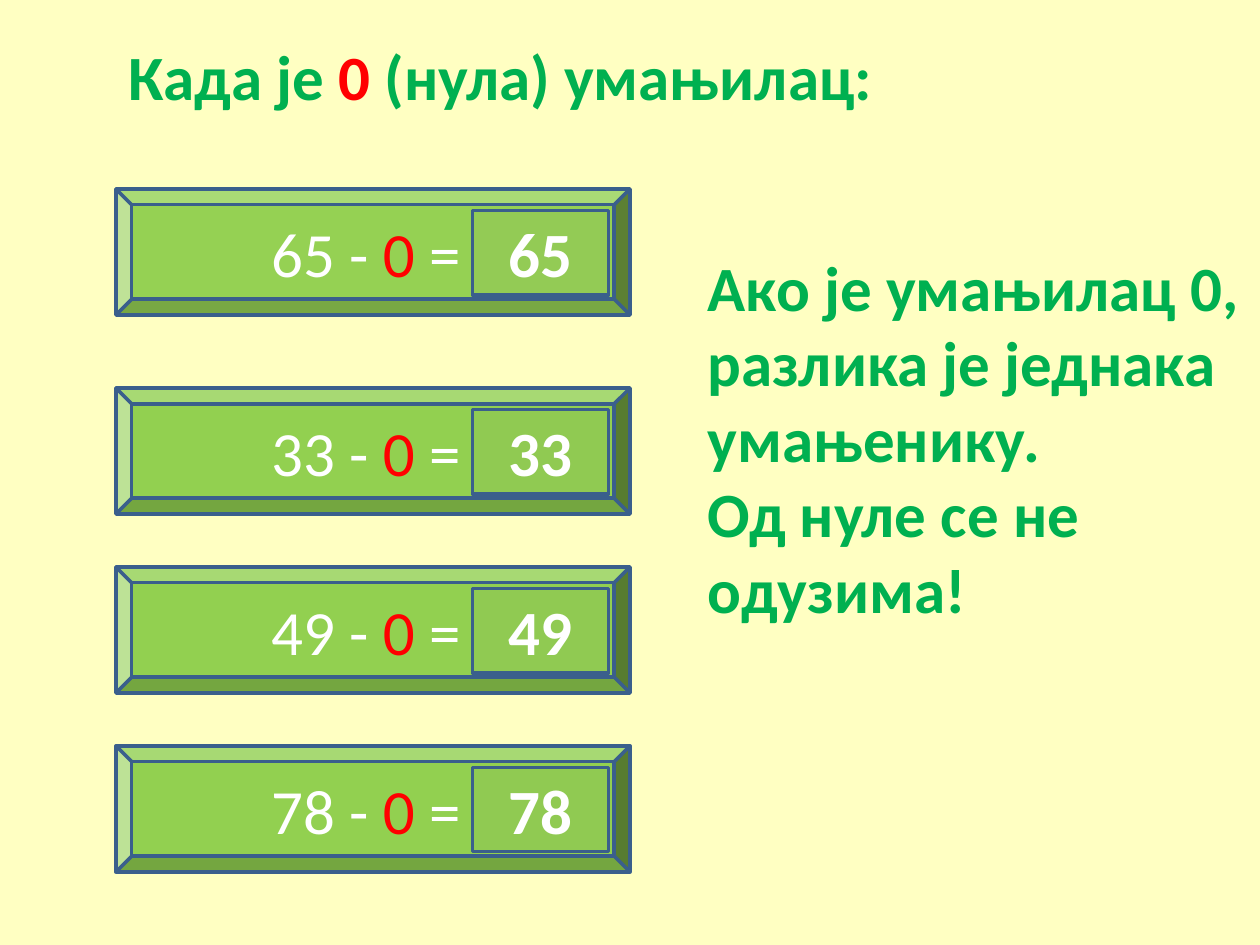
from dataclasses import dataclass

from lxml.etree import SubElement
from pptx import Presentation
from pptx.dml.color import RGBColor
from pptx.enum.shapes import MSO_SHAPE as Shape
from pptx.enum.text import MSO_ANCHOR as Anchor, MSO_AUTO_SIZE as AutoSize, PP_ALIGN as Align
from pptx.oxml.ns import qn
from pptx.util import Inches, Pt


@dataclass(frozen=True)
class Theme:
    page: str = "FFFFC2"
    panel: str = "92D050"
    answer: str = "7030A0"
    outline: str = "3A5F8C"
    green: str = "00B050"
    red: str = "FF0000"
    white: str = "FFFFFF"
    font: str = "Calibri"
    size: int = 36
    line: int = 2


class SlideBuilder:
    def __init__(self, deck, theme):
        self.theme = theme
        self.page = deck.slides.add_slide(deck.slide_layouts[6])
        fill = self.page.background.fill
        fill.solid()
        fill.fore_color.rgb = RGBColor.from_string(theme.page)

    def add_spans(self, para, spans, bold, align):
        para.alignment = align
        for text, color in spans:
            span = para.add_run()
            span.text = text
            span.font.name = self.theme.font
            span.font.size = Pt(self.theme.size)
            span.font.bold = bold
            span.font.color.rgb = RGBColor.from_string(color)

    def panel(self, kind, left, top, width, height, fill, spans, bold=False, opacity=100):
        box = self.page.shapes.add_shape(
            kind, Inches(left), Inches(top), Inches(width), Inches(height))
        box.shadow.inherit = False
        box.fill.solid()
        box.fill.fore_color.rgb = RGBColor.from_string(fill)
        if opacity < 100:
            color = box.element.spPr.find(qn("a:solidFill"))[0]
            SubElement(color, qn("a:alpha")).set("val", str(opacity * 1000))
        box.line.color.rgb = RGBColor.from_string(self.theme.outline)
        box.line.width = Pt(self.theme.line)
        box.text_frame.vertical_anchor = Anchor.MIDDLE
        self.add_spans(box.text_frame.paragraphs[0], spans, bold, Align.CENTER)

    def text(self, left, top, width, height, paragraphs):
        box = self.page.shapes.add_textbox(
            Inches(left), Inches(top), Inches(width), Inches(height))
        frame = box.text_frame
        frame.word_wrap = True
        frame.auto_size = AutoSize.SHAPE_TO_FIT_TEXT
        for index, spans in enumerate(paragraphs):
            para = frame.add_paragraph() if index else frame.paragraphs[0]
            self.add_spans(para, spans, True, Align.LEFT)

    def equation(self, top, number, opacity):
        theme = self.theme
        self.panel(Shape.BEVEL, 0.92, top, 4.08, 1, theme.panel,
                   [(f"{number} - ", theme.white), ("0", theme.red), (" = ", theme.white)],
                   opacity=opacity)
        self.panel(Shape.RECTANGLE, 3.75, top + 0.17, 1.08, 0.67, theme.answer,
                   [(str(number), theme.white)], bold=True, opacity=3)


def main():
    deck = Presentation()
    deck.slide_width, deck.slide_height = Inches(10), Inches(7.5)
    theme = Theme()
    builder = SlideBuilder(deck, theme)

    equations = [(1.5, 65, 97), (3.08, 33, 100), (4.5, 49, 100), (5.92, 78, 100)]
    for top, number, opacity in equations:
        builder.equation(top, number, opacity)

    builder.text(0.92, 0.25, 8.67, 0.71, [
        [("Када је ", theme.green), ("0 ", theme.red), ("(нула) умањилац:", theme.green)],
    ])
    builder.text(5.52, 1.92, 4.5, 3.74, [
        [("Ако је умањилац 0, разлика је једнака умањенику.", theme.green)],
        [("Од нуле се не одузима!", theme.green)],
    ])
    deck.save("out.pptx")


if __name__ == "__main__":
    main()
